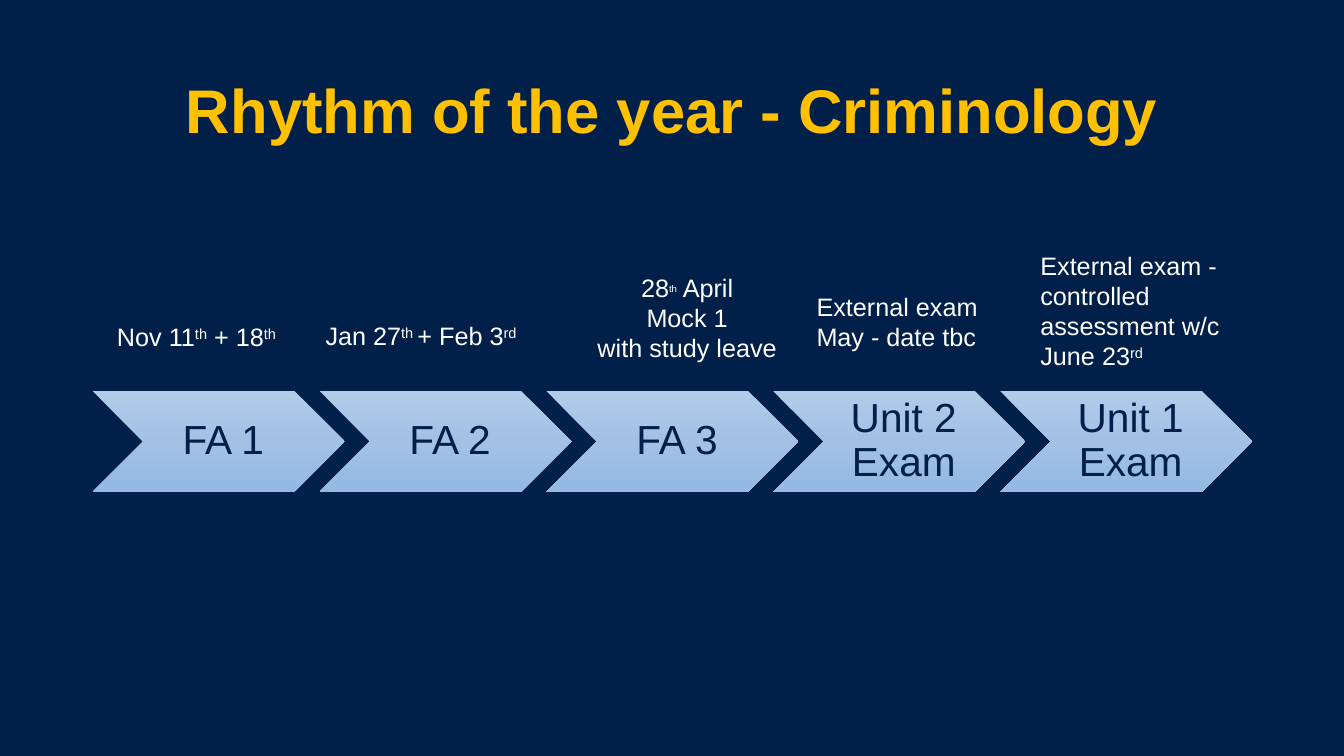
from copy import deepcopy

from pptx import Presentation
from pptx.dml.color import RGBColor
from pptx.enum.shapes import MSO_SHAPE
from pptx.enum.text import MSO_ANCHOR, MSO_AUTO_SIZE, PP_ALIGN
from pptx.oxml.ns import qn
from pptx.util import Inches, Pt

CHEVRON = MSO_SHAPE.CHEVRON
TOP, MIDDLE = MSO_ANCHOR.TOP, MSO_ANCHOR.MIDDLE
LEFT, CENTER = PP_ALIGN.LEFT, PP_ALIGN.CENTER
GROW, FIXED = MSO_AUTO_SIZE.SHAPE_TO_FIT_TEXT, MSO_AUTO_SIZE.NONE

COLORS = {"navy": "001F49", "gold": "FFC000", "white": "FFFFFF"}
GRADIENT = [(0, "B1CBE9"), (0.5, "A3C1E5"), (1, "93B9E4")]
FONT = "Arial"

TITLE = "Rhythm of the year - Criminology"
STAGES = ["FA 1", "FA 2", "FA 3", "Unit 2 Exam", "Unit 1 Exam"]
# Text between carets is superscript.
DATES = [
    ((0.92, 3.14, 2.22, 0.4), ["Nov 11^th^ + 18^th^"], {"insets": (0.24, 0.05, 0.1, 0.05)}),
    ((3.13, 3.13, 2.32, 0.4), ["Jan 27^th ^+ Feb 3^rd^"], {}),
    ((5.74, 2.65, 2.15, 1.01), ["28^th^ April", "Mock 1", "with study leave"],
     {"align": CENTER, "sup_size": 12}),
    ((8, 2.84, 2.02, 0.71), ["External exam May - date tbc"], {}),
    ((10.22, 2.43, 2.09, 1.31),
     ["External exam -", "controlled assessment w/c June 23^rd^"], {}),
]

ROW_LEFT, ROW_TOP = 0.92, 3.88
CHEVRON_W, CHEVRON_H, STEP = 2.5, 1, 2.25


def write(sp, lines, size=18, color="white", bold=False, align=LEFT, anchor=TOP,
          spacing=1.0, insets=(0.1, 0.05, 0.1, 0.05), sup_size=None, fit=FIXED):
    tf = sp.text_frame
    tf.word_wrap = True
    tf.auto_size = fit
    tf.vertical_anchor = anchor
    tf.margin_left, tf.margin_top, tf.margin_right, tf.margin_bottom = map(Inches, insets)
    for i, line in enumerate(lines):
        p = tf.paragraphs[0] if i == 0 else tf.add_paragraph()
        p.alignment = align
        p.line_spacing = spacing
        for j, part in enumerate(line.split("^")):
            if not part:
                continue
            r = p.add_run()
            r.text = part
            raised = j % 2 == 1
            r.font.name = FONT
            r.font.size = Pt(sup_size if raised and sup_size else size)
            r.font.bold = bold
            r.font.color.rgb = RGBColor.from_string(COLORS[color])
            if raised:
                r._r.get_or_add_rPr().set("baseline", "30000")


def fill_gradient(sp):
    sp.fill.gradient()
    sp.fill.gradient_angle = 270
    first = sp._element.spPr.find(".//" + qn("a:gs"))
    first.addnext(deepcopy(first))
    for stop, (position, color) in zip(sp.fill.gradient_stops, GRADIENT):
        stop.position = position
        stop.color.rgb = RGBColor.from_string(color)


def main():
    prs = Presentation()
    prs.slide_width, prs.slide_height = Inches(13.33), Inches(7.5)
    s = prs.slides.add_slide(prs.slide_layouts[6])
    s.background.fill.solid()
    s.background.fill.fore_color.rgb = RGBColor.from_string(COLORS["navy"])

    title = s.shapes.add_textbox(*map(Inches, (0.92, 0.4, 11.5, 1.45)))
    write(title, [TITLE], size=44, color="gold", bold=True, align=CENTER,
          anchor=MIDDLE, spacing=0.9)

    timeline = s.shapes.add_group_shape()
    for i, stage in enumerate(STAGES):
        box = (ROW_LEFT + i * STEP, ROW_TOP, CHEVRON_W, CHEVRON_H)
        sp = timeline.shapes.add_shape(CHEVRON, *map(Inches, box))
        sp.shadow.inherit = False
        sp.line.fill.background()
        fill_gradient(sp)
        write(sp, [stage], size=29, color="navy", align=CENTER, anchor=MIDDLE,
              spacing=0.9, insets=(0.13, 0.04, 0.04, 0.04))

    for box, lines, style in DATES:
        write(s.shapes.add_textbox(*map(Inches, box)), lines, fit=GROW, **style)

    prs.save("out.pptx")


if __name__ == "__main__":
    main()
